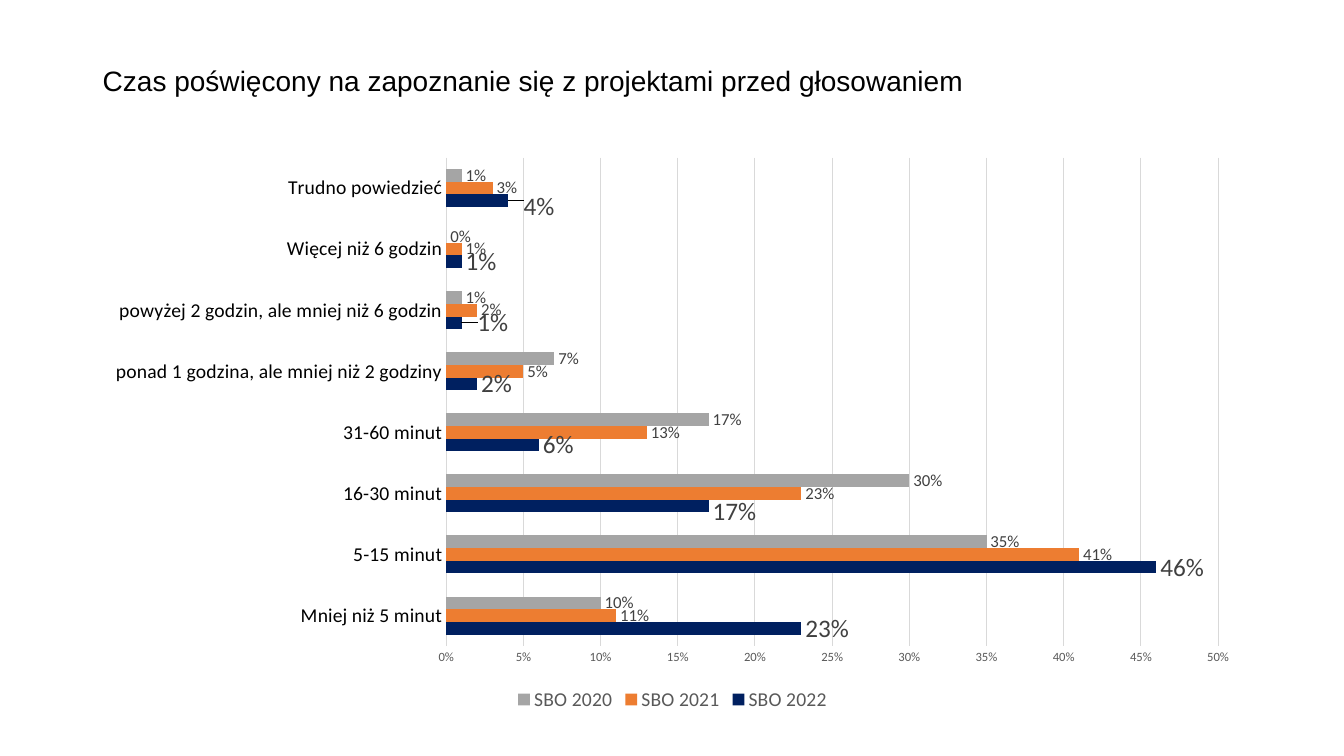
import dataclasses

import lxml.etree
import pptx
import pptx.chart.data
import pptx.dml.color
import pptx.enum.chart
import pptx.enum.text
import pptx.oxml
import pptx.oxml.ns
import pptx.util

Inches = pptx.util.Inches
Pt = pptx.util.Pt
FACE = "Calibri"
GRID = "D9D9D9"
GREY = "595959"


@dataclasses.dataclass
class Series:
    name: str
    values: list[float]
    color: str
    size: int
    # Point index -> label offset as a share of the chart
    shifts: dict[int, tuple[float, float]] = dataclasses.field(default_factory=dict)


BANDS = [
    "Mniej niż 5 minut",
    "5-15 minut",
    "16-30 minut",
    "31-60 minut",
    "ponad 1 godzina, ale mniej niż 2 godziny",
    "powyżej 2 godzin, ale mniej niż 6 godzin",
    "Więcej niż 6 godzin",
    "Trudno powiedzieć",
]
YEARS = [
    Series("SBO 2022", [0.23, 0.46, 0.17, 0.06, 0.02, 0.01, 0.01, 0.04], "002060", 18,
           {2: (0, 0.01), 5: (0.01, 0), 7: (0.01, 0.01)}),
    Series("SBO 2021", [0.11, 0.41, 0.23, 0.13, 0.05, 0.02, 0.01, 0.03], "ED7D31", 12),
    Series("SBO 2020", [0.1, 0.35, 0.3, 0.17, 0.07, 0.01, 0, 0.01], "A5A5A5", 12),
]


def rgb(code: str) -> pptx.dml.color.RGBColor:
    return pptx.dml.color.RGBColor.from_string(code)


def style(font, size: int, color: str, face: str = FACE) -> None:
    font.size = Pt(size)
    font.name = face
    font.color.rgb = rgb(color)


def rule(line) -> None:
    line.color.rgb = rgb(GRID)
    line.width = Pt(0.75)


def shift(label, x: float, y: float) -> None:
    """Move one data label away from its default place."""
    node = label._get_or_add_dLbl()
    layout = pptx.oxml.parse_xml(
        f'<c:layout {pptx.oxml.ns.nsdecls("c")}><c:manualLayout>'
        f'<c:x val="{x}"/><c:y val="{y}"/></c:manualLayout></c:layout>')
    node.insert(1, layout)


def add_title(slide) -> None:
    box = slide.shapes.add_textbox(Inches(0.92), Inches(0.4), Inches(11.5), Inches(0.84))
    frame = box.text_frame
    frame.word_wrap = True
    frame.vertical_anchor = pptx.enum.text.MSO_ANCHOR.MIDDLE
    para = frame.paragraphs[0]
    para.line_spacing = 0.9
    run = para.add_run()
    run.text = "Czas poświęcony na zapoznanie się z projektami przed głosowaniem"
    style(run.font, 20, "000000", "Arial")


def style_bars(bars, year: Series) -> None:
    bars.format.fill.solid()
    bars.format.fill.fore_color.rgb = rgb(year.color)
    bars.invert_if_negative = False
    place = pptx.enum.chart.XL_LABEL_POSITION.OUTSIDE_END
    labels = bars.data_labels
    labels.show_value = True
    labels.number_format = "0%"
    labels.number_format_is_linked = False
    labels.position = place
    style(labels.font, year.size, "404040")
    for index, (x, y) in year.shifts.items():
        label = bars.points[index].data_label
        style(label.font, year.size, "404040")
        label.position = place
        shift(label, x, y)


def style_axes(chart) -> None:
    none = pptx.enum.chart.XL_TICK_MARK.NONE
    bands, scale = chart.category_axis, chart.value_axis
    for axis, size, color in ((bands, 14, "000000"), (scale, 9, GREY)):
        axis.major_tick_mark = axis.minor_tick_mark = none
        style(axis.tick_labels.font, size, color)
    rule(bands.format.line)
    scale.format.line.fill.background()
    scale.minimum_scale, scale.maximum_scale, scale.major_unit = 0, 0.5, 0.05
    scale.has_major_gridlines = True
    rule(scale.major_gridlines.format.line)
    scale.tick_labels.number_format = "0%"
    scale.tick_labels.number_format_is_linked = False


def add_bars(slide) -> None:
    data = pptx.chart.data.CategoryChartData(number_format="0%")
    data.categories = BANDS
    for year in YEARS:
        data.add_series(year.name, year.values)
    chart = slide.shapes.add_chart(
        pptx.enum.chart.XL_CHART_TYPE.BAR_CLUSTERED,
        Inches(0.92), Inches(1.45), Inches(11.5), Inches(5.65), data).chart
    chart.has_title = False
    style(chart.font, 10, "000000")

    # Bars and their labels
    plot = chart.plots[0]
    plot.gap_width = 182
    plot.overlap = 0
    plot.vary_by_categories = False
    for bars, year in zip(plot.series, YEARS):
        style_bars(bars, year)

    # Axes and legend
    style_axes(chart)
    chart.has_legend = True
    chart.legend.position = pptx.enum.chart.XL_LEGEND_POSITION.BOTTOM
    chart.legend.include_in_layout = False
    style(chart.legend.font, 14, GREY)


def main() -> None:
    deck = pptx.Presentation()
    deck.slide_width, deck.slide_height = Inches(13.33), Inches(7.5)
    slide = deck.slides.add_slide(deck.slide_layouts[6])
    add_title(slide)
    add_bars(slide)
    deck.save("out.pptx")


if __name__ == "__main__":
    main()
